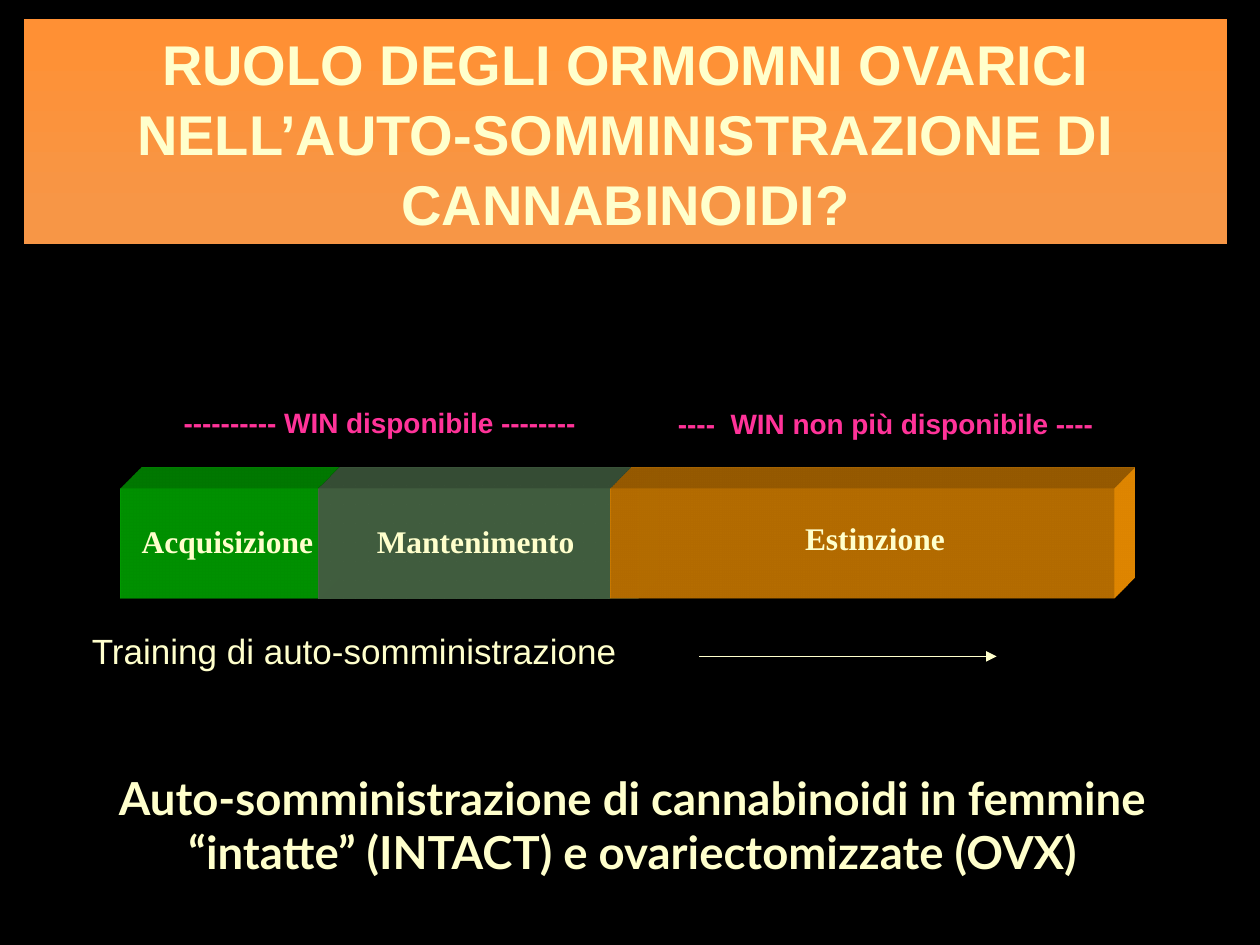
from dataclasses import dataclass
from lxml.etree import SubElement
from pptx import Presentation
from pptx.dml.color import RGBColor
from pptx.enum.shapes import MSO_CONNECTOR, MSO_SHAPE
from pptx.enum.text import MSO_ANCHOR, PP_ALIGN
from pptx.oxml import parse_xml
from pptx.oxml.ns import nsdecls, qn
from pptx.util import Pt

HUES = {"back": "000000", "cream": "FFFFCC", "pink": "FF3399", "green": "00CC00",
        "sage": "5E855B", "amber": "FF9900", "low": "F79646", "high": "FF9034"}
SCENE = ('<a:scene3d {ns}><a:camera prst="legacyObliqueTopRight"/>'
         '<a:lightRig rig="legacyFlat3" dir="b"/></a:scene3d>')
SOLID = ('<a:sp3d {ns} extrusionH="430200" prstMaterial="legacyMatte">'
         '<a:extrusionClr><a:srgbClr val="{hue}"/></a:extrusionClr></a:sp3d>')


@dataclass
class Label:
    text: str
    box: tuple[float, float, float, float]
    size: float
    font: str
    hue: str = "cream"
    bold: bool = True
    align: PP_ALIGN = PP_ALIGN.CENTER
    lead: float | None = None


@dataclass
class Phase:
    left: float
    width: float
    hue: str


PHASES = [Phase(69, 113, "green"), Phase(182, 182.3, "sage"), Phase(349, 287.5, "amber")]
TITLE = Label("RUOLO DEGLI ORMOMNI OVARICI NELL’AUTO-SOMMINISTRAZIONE DI CANNABINOIDI?",
              (13.7, 10.8, 687.6, 128.9), 32, "Arial", lead=Pt(40))
LABELS = [
    Label("Auto-somministrazione di cannabinoidi in femmine “intatte” (INTACT) "
          "e ovariectomizzate (OVX)", (16.5, 436.3, 690.5, 70.5), 26, "Lato"),
    Label("Acquisizione", (72.7, 294.5, 114.5, 28.8), 18, "Times New Roman"),
    Label("Mantenimento", (203.8, 294.5, 136, 28.8), 18, "Times New Roman"),
    Label("Estinzione", (440.6, 293, 118.8, 28.8), 18, "Times New Roman"),
    Label("---------- WIN disponibile --------", (84.2, 228.2, 265.7, 26.6), 16, "Arial", "pink"),
    Label("----  WIN non più disponibile ----", (358.6, 229, 295.2, 26.6), 16, "Arial", "pink"),
    Label("Training di auto-somministrazione", (45.4, 363.6, 344.2, 23), 20, "Arial",
          bold=False, align=PP_ALIGN.LEFT, lead=0.66),
]


def tint(name: str) -> RGBColor:
    return RGBColor.from_string(HUES[name])


def add_rect(slide, box: tuple):
    shape = slide.shapes.add_shape(MSO_SHAPE.RECTANGLE, *map(Pt, box))
    shape.line.fill.background()
    shape.shadow.inherit = False
    return shape


def write(shape, label: Label) -> None:
    frame = shape.text_frame
    frame.word_wrap = True
    para = frame.paragraphs[0]
    para.alignment = label.align
    if label.lead:
        para.line_spacing = label.lead
    run = para.add_run()
    run.text = label.text
    run.font.size = Pt(label.size)
    run.font.name = label.font
    run.font.bold = label.bold
    run.font.color.rgb = tint(label.hue)


def add_title(slide, label: Label) -> None:
    shape = add_rect(slide, label.box)
    shape.fill.gradient()
    shape.fill.gradient_angle = 90
    for stop, (place, hue) in zip(shape.fill.gradient_stops, [(0.14, "low"), (0.95, "high")]):
        stop.position = place
        stop.color.rgb = tint(hue)
    shape.text_frame.vertical_anchor = MSO_ANCHOR.MIDDLE
    write(shape, label)


def add_phase(slide, phase: Phase) -> None:
    shape = add_rect(slide, (phase.left, 279.2, phase.width, 62.6))
    shape.fill.solid()
    shape.fill.fore_color.rgb = tint(phase.hue)
    for xml in (SCENE, SOLID):
        part = parse_xml(xml.format(ns=nsdecls("a"), hue=HUES[phase.hue]))
        shape._element.spPr.append(part)


def add_arrow(slide, start: float, end: float, top: float) -> None:
    arrow = slide.shapes.add_connector(MSO_CONNECTOR.STRAIGHT, Pt(start), Pt(top), Pt(end), Pt(top))
    arrow.line.width = Pt(1)
    arrow.line.color.rgb = tint("cream")
    SubElement(arrow.line._get_or_add_ln(), qn("a:tailEnd"), type="triangle")
    SubElement(arrow._element.spPr, qn("a:effectLst"))


def main() -> None:
    """Build the slide on the phases of self-administration training."""
    deck = Presentation()
    deck.slide_width, deck.slide_height = Pt(720), Pt(540)
    slide = deck.slides.add_slide(deck.slide_layouts[6])
    slide.background.fill.solid()
    slide.background.fill.fore_color.rgb = tint("back")
    add_title(slide, TITLE)
    for phase in PHASES:
        add_phase(slide, phase)
    for label in LABELS:
        write(slide.shapes.add_textbox(*map(Pt, label.box)), label)
    add_arrow(slide, 399.6, 569.5, 375.1)
    deck.save("out.pptx")


if __name__ == "__main__":
    main()
